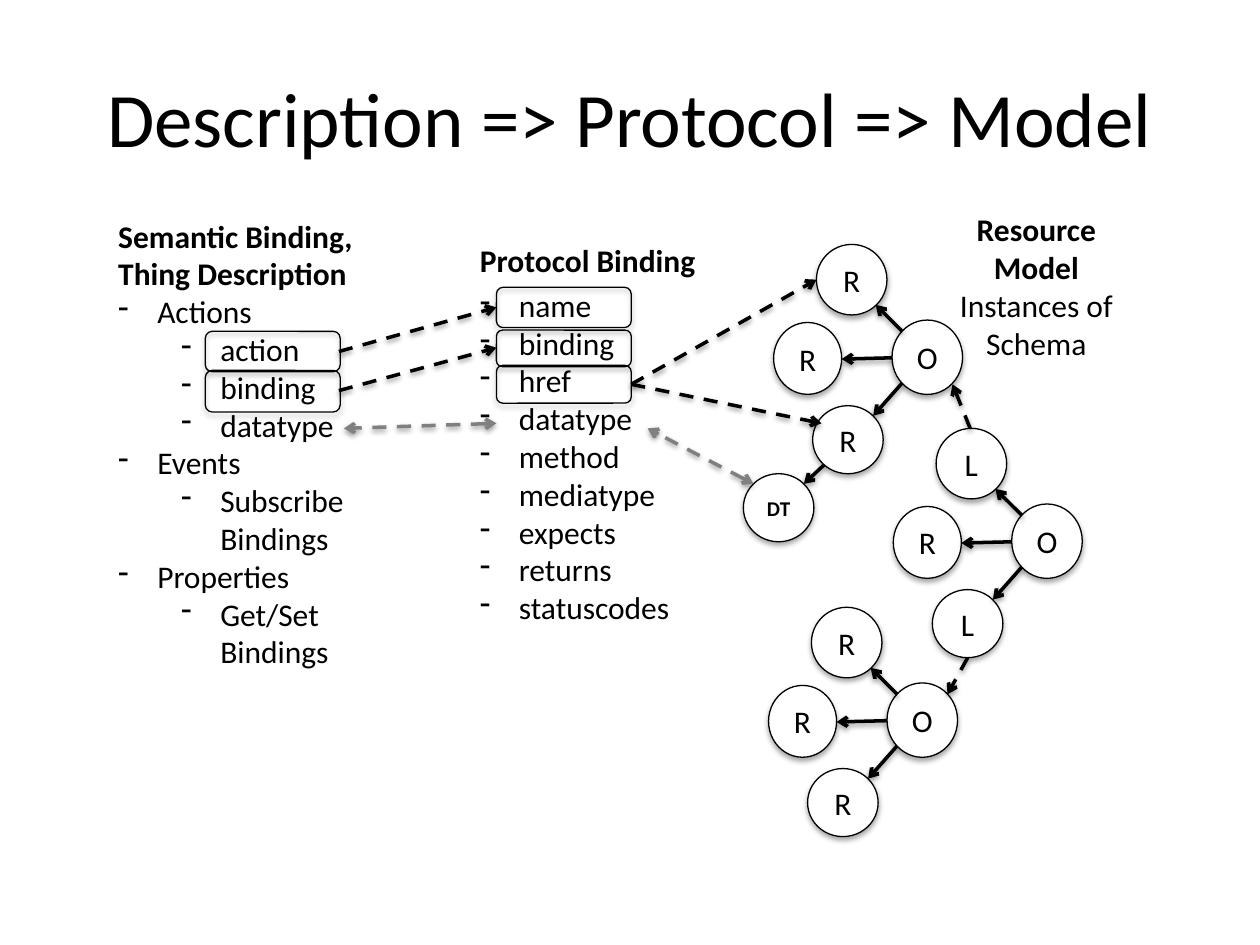
from lxml import etree
from pptx import Presentation
from pptx.dml.color import RGBColor
from pptx.enum.dml import MSO_LINE
from pptx.enum.shapes import MSO_CONNECTOR, MSO_SHAPE
from pptx.enum.text import MSO_ANCHOR, MSO_AUTO_SIZE, PP_ALIGN
from pptx.oxml.ns import qn
from pptx.util import Emu, Inches, Pt

LEFT, CENTER = PP_ALIGN.LEFT, PP_ALIGN.CENTER
TOP, MIDDLE = MSO_ANCHOR.TOP, MSO_ANCHOR.MIDDLE
GROW, FIXED = MSO_AUTO_SIZE.SHAPE_TO_FIT_TEXT, MSO_AUTO_SIZE.NONE
OVAL, ROUNDED = MSO_SHAPE.OVAL, MSO_SHAPE.ROUNDED_RECTANGLE
STRAIGHT, DASH = MSO_CONNECTOR.STRAIGHT, MSO_LINE.DASH

FONT, BLACK, GRAY, WHITE = "Calibri", "000000", "808080", "FFFFFF"
HEADING = None
HANGING = 0.31
INDENTS = (0.31, 0.81)

TITLE = "Description => Protocol => Model"
PROTOCOL = [("Protocol Binding", HEADING)] + [(name, 0) for name in (
    "name", "binding", "href", "datatype", "method",
    "mediatype", "expects", "returns", "statuscodes")]
SEMANTIC = [
    ("Semantic Binding, Thing Description", HEADING),
    ("Actions", 0), ("action", 1), ("binding", 1), ("datatype", 1),
    ("Events", 0), ("Subscribe Bindings", 1),
    ("Properties", 0), ("Get/Set Bindings", 1),
]
RESOURCE = ["Resource Model", "Instances of Schema"]

FRAME_WIDTH = 1.07
FRAMES = [(1.63, 2.63, 0.32), (1.63, 2.94, 0.33),
          (3.94, 2.28, 0.32), (3.94, 2.62, 0.29), (3.94, 2.9, 0.3)]

CLUSTERS = [((7.08, 2.54), "RRR"), ((7.04, 5.42), "RRR"), ((8.03, 4.0), "LRL")]
HUB_SIZE = (0.56, 0.59)
SATELLITES = [
    ((-0.6, -0.6), (0.56, 0.56), (0.08, 0.09), (-0.13, -0.12)),
    ((-0.94, 0.02), (0.54, 0.57), (0, 0.3), (-0.4, 0.31)),
    ((-0.63, 0.68), (0.56, 0.54), (0.08, 0.5), (-0.15, 0.76)),
]
DATATYPE_NODE = (5.9, 3.76, 0.56, 0.54)
DATATYPE_ARROW = ((6.54, 3.69), (6.38, 3.84))

DASHED_ARROWS = [
    ((2.69, 2.79), (3.94, 2.44)), ((2.69, 3.1), (3.94, 2.76)),
    ((5.01, 3.05), (6.52, 3.36)), ((5.01, 3.05), (6.48, 2.22)),
    ((7.7, 3.4), (7.56, 3.05)), ((7.68, 5.22), (7.52, 5.51)),
]
TWO_WAY_ARROWS = [((3.94, 3.36), (2.73, 3.4)), ((5.98, 3.84), (5.14, 3.4))]

presentation = Presentation()
presentation.slide_width, presentation.slide_height = Inches(10), Inches(7.5)
slide = presentation.slides.add_slide(presentation.slide_layouts[6])


def color(value):
    return RGBColor.from_string(value)


def assign(target, values):
    for name, value in values.items():
        setattr(target, name, value)


def add_shadow(shape, opacity, distance):
    properties = shape._element.spPr
    effects = properties.find(qn("a:effectLst"))
    if effects is None:
        effects = etree.SubElement(properties, qn("a:effectLst"))
    shadow = etree.SubElement(
        effects, qn("a:outerShdw"), blurRad=str(Pt(3.1)),
        dist=str(Pt(distance)), dir="5400000", rotWithShape="0")
    tint = etree.SubElement(shadow, qn("a:srgbClr"), val=BLACK)
    etree.SubElement(tint, qn("a:alpha"), val=str(opacity * 1000))


def write(paragraph, text, size=18, bold=False, alignment=LEFT):
    paragraph.alignment = alignment
    run = paragraph.add_run()
    run.text = text
    assign(run.font, {"name": FONT, "size": Pt(size), "bold": bold})
    run.font.color.rgb = color(BLACK)


def add_text(box, lines, size=18, alignment=LEFT, anchor=TOP, wrap=True, fit=GROW):
    frame = slide.shapes.add_textbox(*map(Inches, box)).text_frame
    assign(frame, {"word_wrap": wrap, "auto_size": fit, "vertical_anchor": anchor})
    for index, (text, bold) in enumerate(lines):
        paragraph = frame.add_paragraph() if index else frame.paragraphs[0]
        write(paragraph, text, size, bold, alignment)
    return frame


def add_outline(box, lines, wrap=True):
    frame = add_text(box, [(text, level is HEADING) for text, level in lines], wrap=wrap)
    for paragraph, (text, level) in zip(frame.paragraphs, lines):
        if level is not HEADING:
            paragraph.level = level
            properties = paragraph._p.get_or_add_pPr()
            properties.set("marL", str(Inches(INDENTS[level])))
            properties.set("indent", str(Inches(-HANGING)))
            etree.SubElement(properties, qn("a:buChar"), char="-")
    return frame


def add_outlined_shape(kind, box):
    shape = slide.shapes.add_shape(kind, *map(Inches, box))
    shape.fill.background()
    shape.line.color.rgb = color(BLACK)
    shape.line.width = Pt(0.75)
    shape.shadow.inherit = False
    add_shadow(shape, 35, 1.8)
    return shape


def add_node(label, box, size=18, bold=False):
    shape = add_outlined_shape(OVAL, box)
    shape.fill.solid()
    shape.fill.fore_color.rgb = color(WHITE)
    frame = shape.text_frame
    assign(frame, {"word_wrap": False, "vertical_anchor": MIDDLE,
                   "margin_left": Emu(0), "margin_right": Emu(0)})
    write(frame.paragraphs[0], label, size, bold, CENTER)


def add_arrow(start, end, dashed=False, line_color=BLACK, ends=("tailEnd",)):
    arrow = slide.shapes.add_connector(STRAIGHT, *map(Inches, start + end))
    arrow.line.color.rgb = color(line_color)
    arrow.line.width = Pt(2)
    if dashed:
        arrow.line.dash_style = DASH
    for end_name in ends:
        etree.SubElement(arrow.line._get_or_add_ln(), qn("a:" + end_name), type="arrow")
    add_shadow(arrow, 38, 1.6)


def shift(origin, offset):
    return origin[0] + offset[0], origin[1] + offset[1]


add_text((0.5, 0.3, 9, 1.25), [(TITLE, False)], 44, CENTER, MIDDLE, fit=FIXED)
protocol = add_outline((3.71, 1.86, 1.94, 3.19), PROTOCOL, wrap=False)
protocol.paragraphs[1].line_spacing = 1.2
add_outline((0.84, 1.67, 2.66, 3.74), SEMANTIC)
add_text((7.29, 1.62, 1.87, 1.31), zip(RESOURCE, (True, False)), alignment=CENTER)

for left, top, height in FRAMES:
    add_outlined_shape(ROUNDED, (left, top, FRAME_WIDTH, height))

for origin, labels in CLUSTERS:
    add_node("O", origin + HUB_SIZE)
    for label, (offset, size, start, end) in zip(labels, SATELLITES):
        add_node(label, shift(origin, offset) + size)
        add_arrow(shift(origin, start), shift(origin, end))

add_node("DT", DATATYPE_NODE, 12, True)
add_arrow(*DATATYPE_ARROW)
for start, end in DASHED_ARROWS:
    add_arrow(start, end, dashed=True)
for start, end in TWO_WAY_ARROWS:
    add_arrow(start, end, True, GRAY, ("headEnd", "tailEnd"))

presentation.save("out.pptx")
